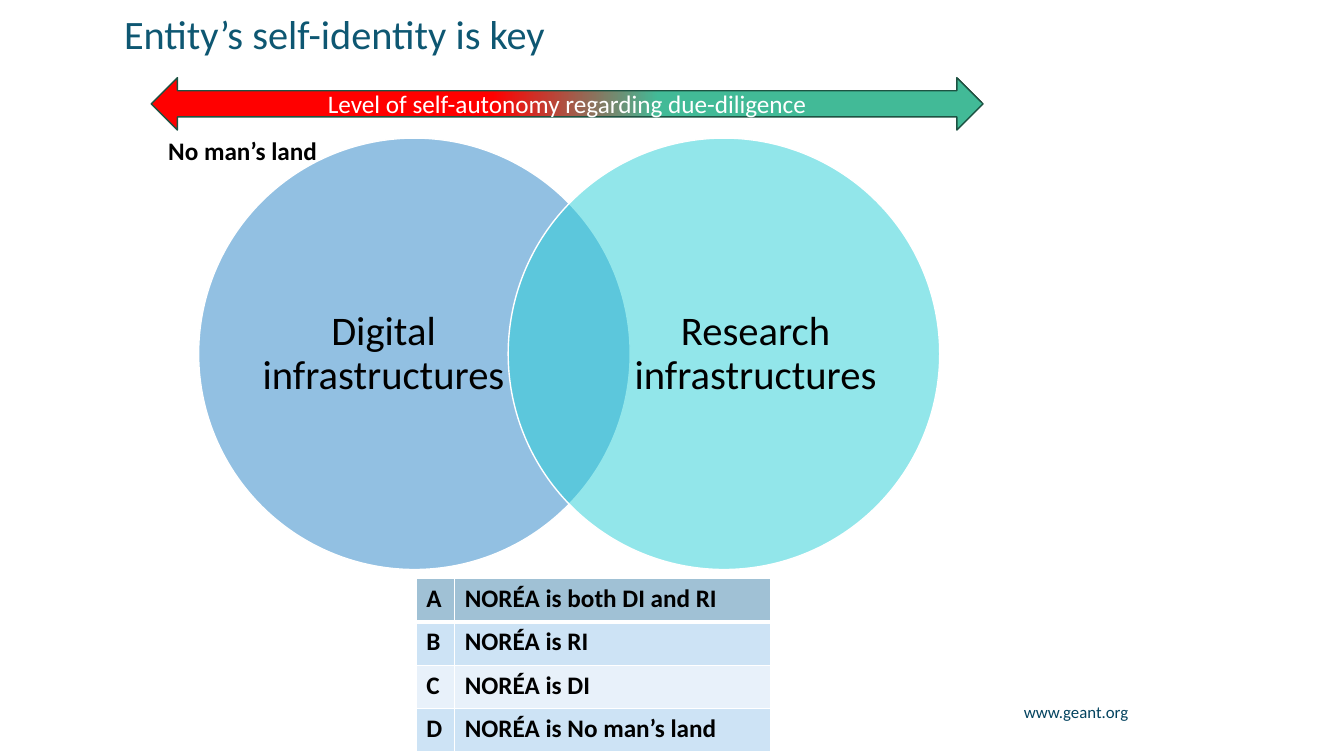
from lxml import etree
from pptx import Presentation
from pptx import util as u
from pptx.dml.color import RGBColor
from pptx.enum import shapes, text
from pptx.oxml import ns

COLORS = {
    "title": "0E5772", "footer": "03435F", "black": "000000", "white": "FFFFFF",
    "red": "FF0000", "green": "42BA97", "arrow_edge": "1D5242",
    "digital": "2683C6", "research": "27CED7",
    "head_row": "A0C1D5", "odd_row": "CDE3F5", "even_row": "E8F1FA",
}
ALIGN = text.PP_ALIGN
MIDDLE = text.MSO_ANCHOR.MIDDLE


def rgb(name):
    return RGBColor.from_string(COLORS[name])


def inches(*lengths):
    return [u.Inches(length) for length in lengths]


class SlideBuilder:
    font = "Calibri"

    def __init__(self, slide):
        self.slide = slide

    def set_words(self, frame, words, size, color, align=ALIGN.LEFT, bold=False,
                  spacing=None):
        frame.text = words
        paragraph = frame.paragraphs[0]
        paragraph.alignment = align
        if spacing:
            paragraph.line_spacing = spacing
        font = paragraph.runs[0].font
        font.name, font.size, font.bold = self.font, u.Pt(size), bold
        font.color.rgb = rgb(color)

    def title(self, box, words):
        title = self.slide.shapes.title
        title.left, title.top, title.width, title.height = inches(*box)
        frame = title.text_frame
        frame.auto_size = text.MSO_AUTO_SIZE.NONE
        frame.vertical_anchor = MIDDLE
        self.set_words(frame, words, 28.8, "title", spacing=0.9)

    def label(self, box, words, size, color, inset=True, anchor=None, **style):
        frame = self.slide.shapes.add_textbox(*inches(*box)).text_frame
        frame.word_wrap = True
        if not inset:
            frame.margin_left = frame.margin_right = 0
            frame.margin_top = frame.margin_bottom = 0
        if anchor:
            frame.vertical_anchor = anchor
        self.set_words(frame, words, size, color, **style)

    def shape(self, kind, box, edge):
        shape = self.slide.shapes.add_shape(kind, *inches(*box))
        shape.shadow.inherit = False
        shape.line.color.rgb = rgb(edge)
        shape.line.width = u.Pt(1)
        return shape

    def gradient_arrow(self, box, words, stops):
        arrow = self.shape(shapes.MSO_SHAPE.LEFT_RIGHT_ARROW, box, "arrow_edge")
        arrow.fill.gradient()
        arrow.fill.gradient_angle = 0
        for stop, (position, color) in zip(arrow.fill.gradient_stops, stops):
            stop.position = position
            stop.color.rgb = rgb(color)
        arrow.text_frame.vertical_anchor = MIDDLE
        self.set_words(arrow.text_frame, words, 18, "white", ALIGN.CENTER)

    def circle(self, left, top, size, color):
        circle = self.shape(shapes.MSO_SHAPE.OVAL, (left, top, size, size), "white")
        circle.fill.solid()
        circle.fill.fore_color.rgb = rgb(color)
        fill = circle.element.spPr.find(ns.qn("a:solidFill"))
        etree.SubElement(fill[0], ns.qn("a:alpha"), val="50000")

    def borders(self, cell, widths):
        properties = cell._tc.get_or_add_tcPr()
        for position, (side, width) in enumerate(widths.items()):
            line = etree.Element(ns.qn(f"a:ln{side}"), w=str(u.Pt(width)))
            fill = etree.SubElement(line, ns.qn("a:solidFill"))
            etree.SubElement(fill, ns.qn("a:srgbClr"), val=COLORS["white"])
            properties.insert(position, line)

    def table(self, left, top, widths, row_height, rows, fills):
        box = inches(left, top, sum(widths), row_height * len(rows))
        table = self.slide.shapes.add_table(len(rows), len(widths), *box).table
        for column, width in zip(table.columns, widths):
            column.width = u.Inches(width)
        for r, (row, color) in enumerate(zip(rows, fills)):
            table.rows[r].height = u.Inches(row_height)
            for c, words in enumerate(row):
                cell = table.cell(r, c)
                cell.fill.solid()
                cell.fill.fore_color.rgb = rgb(color)
                self.set_words(cell.text_frame, words, 18, "black", bold=True)
                # The header row is set off by a thicker rule
                self.borders(cell, {"L": 1, "R": 1, "T": 3 if r == 1 else 1,
                                    "B": 3 if r == 0 else 1})


def main():
    deck = Presentation()
    deck.slide_width, deck.slide_height = inches(13.33, 7.5)
    builder = SlideBuilder(deck.slides.add_slide(deck.slide_layouts[5]))

    # Title and footer address
    builder.title((1.13, 0.13, 10.82, 0.47), "Entity’s self-identity is key")
    builder.label((9.61, 6.91, 1.68, 0.36), "www.geant.org", 12, "footer",
                  align=ALIGN.RIGHT)

    # Autonomy scale
    builder.gradient_arrow((1.5, 0.77, 8.25, 0.52),
                           "Level of self-autonomy regarding due-diligence",
                           [(0.41, "red"), (0.61, "green")])

    # Overlapping infrastructures
    for circle_left, label_left, color, words in (
            (1.97, 2.57, "digital", "Digital infrastructures"),
            (5.04, 6.26, "research", "Research infrastructures")):
        builder.circle(circle_left, 1.37, 4.28, color)
        builder.label((label_left, 1.88, 2.47, 3.27), words, 29, "black",
                      inset=False, anchor=MIDDLE, align=ALIGN.CENTER, spacing=0.9)
    builder.label((1.57, 1.29, 4.42, 0.4), "No man’s land", 18, "black", bold=True)

    # Answer options
    builder.table(4.13, 5.74, (0.38, 3.13), 0.43,
                  [("A", "NORÉA is both DI and RI"), ("B", "NORÉA is RI"),
                   ("C", "NORÉA is DI"), ("D", "NORÉA is No man’s land")],
                  ["head_row", "odd_row", "even_row", "odd_row"])

    deck.save("out.pptx")


if __name__ == "__main__":
    main()
